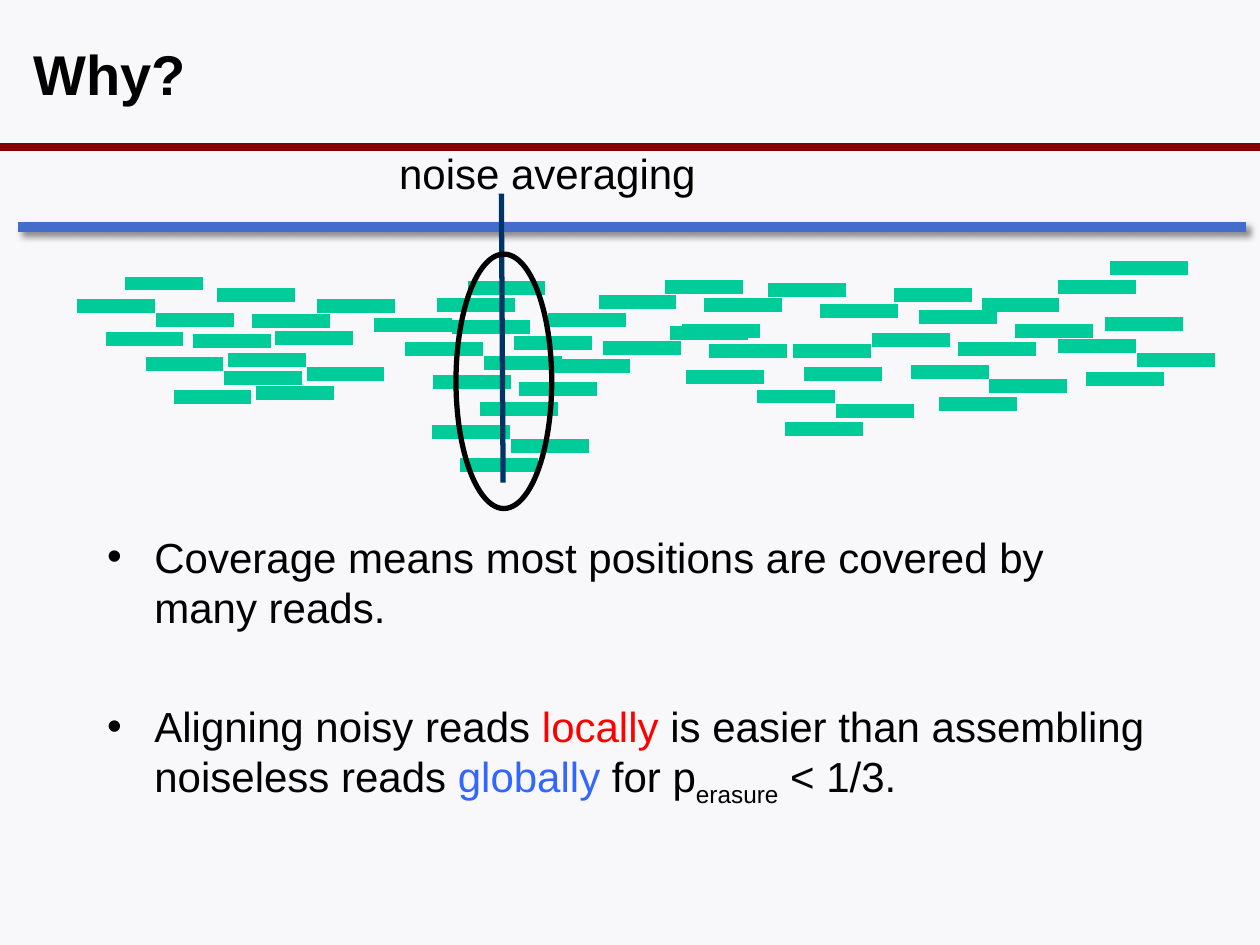
from lxml.etree import SubElement
from pptx import Presentation
from pptx.dml.color import RGBColor
from pptx.enum.shapes import MSO_CONNECTOR, MSO_SHAPE
from pptx.enum.text import MSO_ANCHOR, MSO_AUTO_SIZE, PP_ALIGN
from pptx.oxml.ns import qn
from pptx.util import Pt

BACKGROUND = RGBColor(0xF8, 0xF8, 0xFA)
BLACK = RGBColor(0x00, 0x00, 0x00)
MAROON = RGBColor(0x80, 0x00, 0x00)
GENOME_BLUE = RGBColor(0x44, 0x6D, 0xCB)
READ_GREEN = RGBColor(0x00, 0xCC, 0x99)
NAVY = RGBColor(0x00, 0x33, 0x66)
RED = RGBColor(0xFF, 0x00, 0x00)
BLUE = RGBColor(0x33, 0x66, 0xFF)

READ_LENGTH = 44.5

# Offsets of the reads inside the two repeating clusters
SMALL_CLUSTER = [(0, 0), (-27, 13), (18, 21), (-11, 31.7)]
LARGE_CLUSTER = [(95.8, 25.2), (48.2, 8.6), (86.4, 0),
                 (19.4, 18.7), (0, 31.7), (108.7, 10.1)]
SMALL_ORIGINS = [(71.3, 162), (110.2, 195.1), (157.2, 193), (258.5, 186.7),
                 (547.4, 199.4), (459.6, 213.6), (631.6, 184.9), (274.1, 233.9)]
LARGE_ORIGINS = [(293.8, 164.2), (296.4, 190.4)]
SINGLE_READS = [
    (580.3, 189.4), (604.8, 164.2), (634.5, 153.2), (560.9, 174.1),
    (438.7, 165.6), (468.7, 177.7), (498.2, 194.3),
    (510.7, 168.3), (525.1, 181.4), (453.4, 200.6),
    (123.8, 168.5), (144.1, 183.7), (181.3, 174.9),
    (249.9, 174.1), (267.2, 164.3), (213.7, 185.5),
]


def add_run(paragraph, text, size=24, color=BLACK, bold=False, baseline=None):
    run = paragraph.add_run()
    run.text = text
    font = run.font
    font.name, font.size, font.bold = "Arial", Pt(size), bold
    font.color.rgb = color
    if baseline is not None:
        font._element.set("baseline", str(baseline * 1000))


class SlideBuilder:
    def __init__(self, slide):
        self.slide = slide
        fill = slide.background.fill
        fill.solid()
        fill.fore_color.rgb = BACKGROUND

    def place(self, shape, left, top, width, height):
        shape.left, shape.top = Pt(left), Pt(top)
        shape.width, shape.height = Pt(width), Pt(height)

    def title(self, text, *box):
        title = self.slide.shapes.title
        self.place(title, *box)
        frame = title.text_frame
        frame.vertical_anchor = MSO_ANCHOR.MIDDLE
        frame.auto_size = MSO_AUTO_SIZE.NONE
        frame.paragraphs[0].alignment = PP_ALIGN.LEFT
        add_run(frame.paragraphs[0], text, size=32, bold=True)

    def bullets(self, items, *box, gap):
        body = self.slide.placeholders[1]
        self.place(body, *box)
        frame = body.text_frame
        frame.auto_size = MSO_AUTO_SIZE.NONE
        for index, pieces in enumerate(items):
            paragraph = frame.add_paragraph() if index else frame.paragraphs[0]
            properties = paragraph._p.get_or_add_pPr()
            properties.set("marL", str(Pt(27)))
            properties.set("indent", str(-Pt(27)))
            paragraph.space_before = Pt(gap if index else 0)
            SubElement(properties, qn("a:buChar")).set("char", "•")
            for text, style in pieces:
                add_run(paragraph, text, **style)

    def line(self, start, end, color, width, shadow=False):
        line = self.slide.shapes.add_connector(
            MSO_CONNECTOR.STRAIGHT, *(Pt(value) for value in (*start, *end)))
        line.line.color.rgb = color
        line.line.width = Pt(width)
        effects = SubElement(line._element.spPr, qn("a:effectLst"))
        if shadow:
            outer = SubElement(effects, qn("a:outerShdw"), blurRad=str(Pt(4)),
                               dist=str(Pt(3)), dir="2700000", rotWithShape="0")
            tint = SubElement(outer, qn("a:srgbClr"), val="000000")
            SubElement(tint, qn("a:alpha"), val="43000")

    def read(self, x, y):
        self.line((x, y), (x + READ_LENGTH, y), READ_GREEN, 8)

    def cluster(self, origin, offsets):
        for dx, dy in offsets:
            self.read(origin[0] + dx, origin[1] + dy)

    def ellipse(self, *box):
        ellipse = self.slide.shapes.add_shape(
            MSO_SHAPE.OVAL, *(Pt(value) for value in box))
        ellipse.shadow.inherit = False
        ellipse.fill.background()
        ellipse.line.color.rgb = BLACK
        ellipse.line.width = Pt(3)

    def label(self, text, *box):
        label = self.slide.shapes.add_textbox(*(Pt(value) for value in box))
        label.text_frame.word_wrap = False
        add_run(label.text_frame.paragraphs[0], text)


def main():
    presentation = Presentation()
    presentation.slide_width, presentation.slide_height = Pt(720), Pt(540)
    builder = SlideBuilder(
        presentation.slides.add_slide(presentation.slide_layouts[1]))

    # Heading and rule
    builder.line((0, 84), (720, 84), MAROON, 4.5)
    builder.title("Why?", 12, 12, 612, 60)

    # Takeaways
    builder.bullets([
        [("Coverage means most positions are covered by many reads.", {})],
        [("Aligning noisy reads ", {}),
         ("locally", {"color": RED}),
         (" is easier than assembling noiseless reads ", {}),
         ("globally ", {"color": BLUE}),
         ("for p", {}),
         ("erasure", {"baseline": -25}),
         (" < 1/3.", {})],
    ], 54, 300, 612, 210, gap=39)

    # Genome and the reads covering it
    builder.line((10.5, 129.6), (712, 129.6), GENOME_BLUE, 6, shadow=True)
    for x, y in SINGLE_READS:
        builder.read(x, y)
    for origin in SMALL_ORIGINS:
        builder.cluster(origin, SMALL_CLUSTER)
    for origin in LARGE_ORIGINS:
        builder.cluster(origin, LARGE_CLUSTER)

    # Position where the noise averages out
    builder.line((286.5, 110.7), (287.5, 275.8), NAVY, 3)
    builder.ellipse(260.6, 145.2, 54.7, 145.4)
    builder.label("noise averaging", 221, 80.6, 186, 36)

    presentation.save("out.pptx")


if __name__ == "__main__":
    main()
